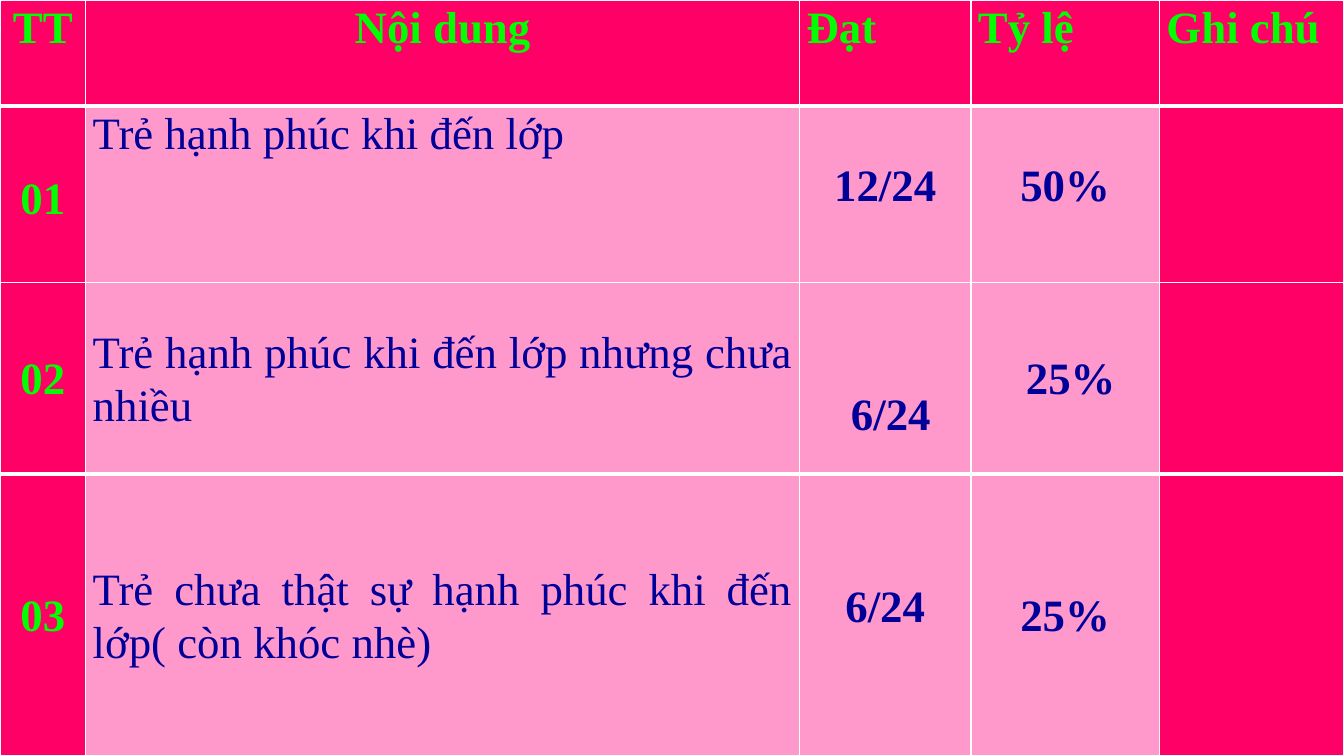
from dataclasses import dataclass

from lxml import etree
from pptx import Presentation
from pptx.dml.color import RGBColor
from pptx.enum.text import MSO_ANCHOR, PP_ALIGN
from pptx.oxml.ns import qn
from pptx.util import Emu, Pt

CENTER, LEFT, JUSTIFY = PP_ALIGN.CENTER, PP_ALIGN.LEFT, PP_ALIGN.JUSTIFY
TOP, MIDDLE = MSO_ANCHOR.TOP, MSO_ANCHOR.MIDDLE

PX = 9144  # one px is a hundredth of an inch
SLIDE_W, SLIDE_H = 1333, 750
COLUMN_WIDTHS = [85, 708, 170, 187, 183]
ROW_HEIGHTS = [105, 175, 190, 280]
CELL_INSET = 7
HALF_STEP = 11  # extra left inset of the values set slightly right


@dataclass(frozen=True)
class Theme:
    font: str = "Times New Roman"
    size: int = 32
    strong_fill: str = "FF0066"
    soft_fill: str = "FF99CC"
    label: str = "00FF00"
    ink: str = "000099"
    border: str = "FFFFFF"
    thin: int = 1
    thick: int = 3


THEME = Theme()

HEADERS = [("TT", CENTER), ("Nội dung", CENTER), ("Đạt", JUSTIFY),
           ("Tỷ lệ", JUSTIFY), ("Ghi chú", JUSTIFY)]

# Each row: number, content, achieved, rate, each with its own format
RESULTS = [
    [("01", {"top": 65}),
     ("Trẻ hạnh phúc khi đến lớp", {"align": LEFT}),
     ("12/24", {"top": 52}),
     ("50%", {"top": 52})],
    [("02", {"anchor": MIDDLE}),
     ("Trẻ hạnh phúc khi đến lớp nhưng chưa nhiều",
      {"align": JUSTIFY, "anchor": MIDDLE}),
     ("6/24", {"top": 104, "shift": HALF_STEP}),
     ("25%", {"anchor": MIDDLE, "shift": HALF_STEP})],
    [("03", {"anchor": MIDDLE}),
     ("Trẻ chưa thật sự hạnh phúc khi đến lớp( còn khóc nhè)",
      {"align": JUSTIFY, "anchor": MIDDLE}),
     ("6/24", {"top": 104}),
     ("25%", {"anchor": MIDDLE})],
]


def px(length):
    return Emu(length * PX)


def write_text(cell, text, color, bold=True, align=CENTER, anchor=TOP,
               top=0, shift=0):
    cell.margin_left, cell.margin_right = px(CELL_INSET + shift), px(CELL_INSET)
    cell.margin_top, cell.margin_bottom = px(top), 0
    cell.vertical_anchor = anchor
    paragraph = cell.text_frame.paragraphs[0]
    paragraph.alignment = align
    paragraph.line_spacing = 1.07
    run = paragraph.add_run()
    run.text = text
    run.font.name = THEME.font
    run.font.size = Pt(THEME.size)
    run.font.bold = bold
    run.font.color.rgb = RGBColor.from_string(color)


def paint_cell(cell, fill, top_line, bottom_line):
    cell.fill.solid()
    cell.fill.fore_color.rgb = RGBColor.from_string(fill)
    properties = cell._tc.get_or_add_tcPr()
    widths = {"a:lnL": THEME.thin, "a:lnR": THEME.thin,
              "a:lnT": top_line, "a:lnB": bottom_line}
    for position, (side, width) in enumerate(widths.items()):
        line = etree.Element(qn(side), w=str(Pt(width)))
        solid = etree.SubElement(line, qn("a:solidFill"))
        etree.SubElement(solid, qn("a:srgbClr"), val=THEME.border)
        properties.insert(position, line)


def add_results_table(slide):
    table = slide.shapes.add_table(
        len(ROW_HEIGHTS), len(COLUMN_WIDTHS),
        0, 0, px(SLIDE_W), px(SLIDE_H)).table
    table.horz_banding = False
    for column, width in zip(table.columns, COLUMN_WIDTHS):
        column.width = px(width)
    for row, height in zip(table.rows, ROW_HEIGHTS):
        row.height = px(height)

    # Fills and borders: heavy rules under the header and above the last row
    heavy_rules = {1, len(ROW_HEIGHTS) - 1}
    rules = [THEME.thick if i in heavy_rules else THEME.thin
             for i in range(len(ROW_HEIGHTS) + 1)]
    last_column = len(COLUMN_WIDTHS) - 1
    for r, row in enumerate(table.rows):
        for c, cell in enumerate(row.cells):
            framed = r == 0 or c in (0, last_column)
            fill = THEME.strong_fill if framed else THEME.soft_fill
            paint_cell(cell, fill, rules[r], rules[r + 1])

    # Header row
    for c, (heading, align) in enumerate(HEADERS):
        write_text(table.cell(0, c), heading, THEME.label, align=align)

    # Result rows: the notes column stays empty
    for r, result in enumerate(RESULTS, start=1):
        for c, (text, text_format) in enumerate(result):
            color = THEME.label if c == 0 else THEME.ink
            write_text(table.cell(r, c), text, color, bold=c != 1,
                       **text_format)


def main():
    deck = Presentation()
    deck.slide_width, deck.slide_height = px(SLIDE_W), px(SLIDE_H)
    slide = deck.slides.add_slide(deck.slide_layouts[6])
    add_results_table(slide)
    deck.save("out.pptx")


if __name__ == "__main__":
    main()
